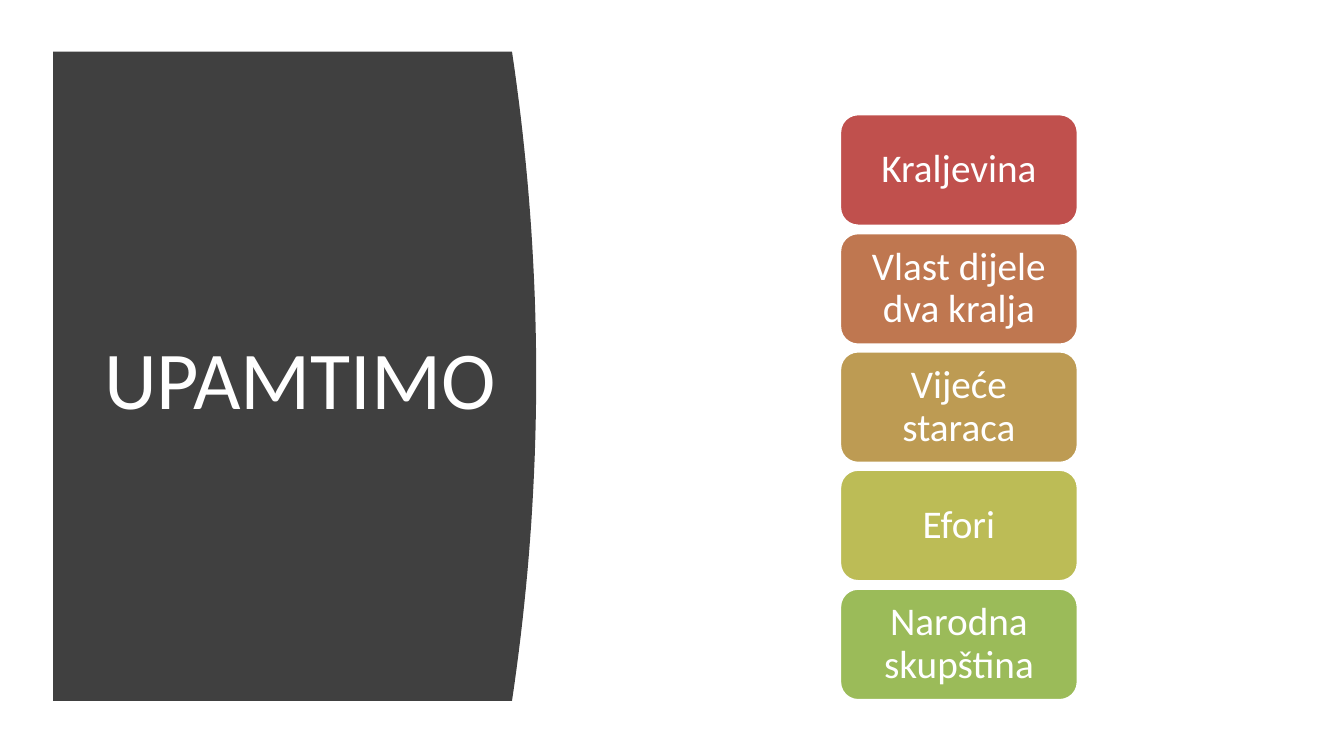
from dataclasses import dataclass

from pptx import Presentation
from pptx.dml.color import RGBColor
from pptx.enum.shapes import MSO_SHAPE
from pptx.enum.text import MSO_ANCHOR, PP_ALIGN
from pptx.util import Pt

PX = 4572  # EMU per px, 200 px to the inch
HUES = {
    "panel": "404040",
    "white": "FFFFFF",
    "red": "C0504D",
    "rust": "BF7750",
    "sand": "BD9B53",
    "lime": "BCBC56",
    "green": "9BBB59",
}


@dataclass
class Box:
    left: int
    top: int
    width: int
    height: int


@dataclass
class Card:
    text: str
    hue: str


CARDS = [
    Card("Kraljevina", "red"),
    Card("Vlast dijele dva kralja", "rust"),
    Card("Vijeće staraca", "sand"),
    Card("Efori", "lime"),
    Card("Narodna skupština", "green"),
]


def color(name: str) -> RGBColor:
    return RGBColor.from_string(HUES[name])


def write(shape, text: str, *, size: int, hue: str = "white",
          lead: float = 1.0, side: int = 0) -> None:
    """Put centred text in a shape, with side margins in px."""
    frame = shape.text_frame
    frame.word_wrap = True
    frame.vertical_anchor = MSO_ANCHOR.MIDDLE
    frame.margin_left = frame.margin_right = side * PX
    frame.margin_top = frame.margin_bottom = 0
    line = frame.paragraphs[0]
    line.alignment = PP_ALIGN.CENTER
    line.line_spacing = lead
    run = line.add_run()
    run.text = text
    run.font.name = "Calibri"
    run.font.size = Pt(size)
    run.font.color.rgb = color(hue)


def add_form(slide, kind: MSO_SHAPE, box: Box):
    shape = slide.shapes.add_shape(kind, box.left * PX, box.top * PX,
                                   box.width * PX, box.height * PX)
    shape.shadow.inherit = False
    return shape


def add_panel(slide, box: Box, bulge: int, steps: int = 40) -> None:
    """Draw a panel whose right edge bows out by bulge px."""
    right = box.left + box.width
    low = box.top + box.height
    edge = []
    for i in range(steps + 1):
        t = i / steps
        x = right - bulge * (2 * t - 1) ** 2
        edge.append((round(x * PX), round((box.top + box.height * t) * PX)))
    pen = slide.shapes.build_freeform(box.left * PX, box.top * PX)
    pen.add_line_segments(edge + [(box.left * PX, low * PX)], close=True)
    shape = pen.convert_to_shape()
    shape.shadow.inherit = False
    shape.fill.solid()
    shape.fill.fore_color.rgb = color("panel")
    shape.line.fill.background()


def add_card(slide, card: Card, box: Box) -> None:
    shape = add_form(slide, MSO_SHAPE.ROUNDED_RECTANGLE, box)
    shape.fill.solid()
    shape.fill.fore_color.rgb = color(card.hue)
    shape.line.color.rgb = color("white")
    shape.line.width = Pt(2)
    write(shape, card.text, size=21, lead=0.9, side=18)


def main() -> None:
    deck = Presentation()
    deck.slide_width, deck.slide_height = 2000 * PX, 1125 * PX
    slide = deck.slides.add_slide(deck.slide_layouts[6])

    # Dark panel with the title
    add_panel(slide, Box(79, 77, 719, 966), bulge=36)
    title = add_form(slide, MSO_SHAPE.OVAL, Box(5, 167, 884, 786))
    title.fill.background()
    title.line.fill.background()
    write(title, "UPAMTIMO", size=44)

    # Column of cards, evenly spread from first top to last top
    first, last = 169, 875
    step = (last - first) / (len(CARDS) - 1)
    for i, card in enumerate(CARDS):
        add_card(slide, card, Box(1249, round(first + i * step), 356, 168))

    deck.save("out.pptx")


if __name__ == "__main__":
    main()
